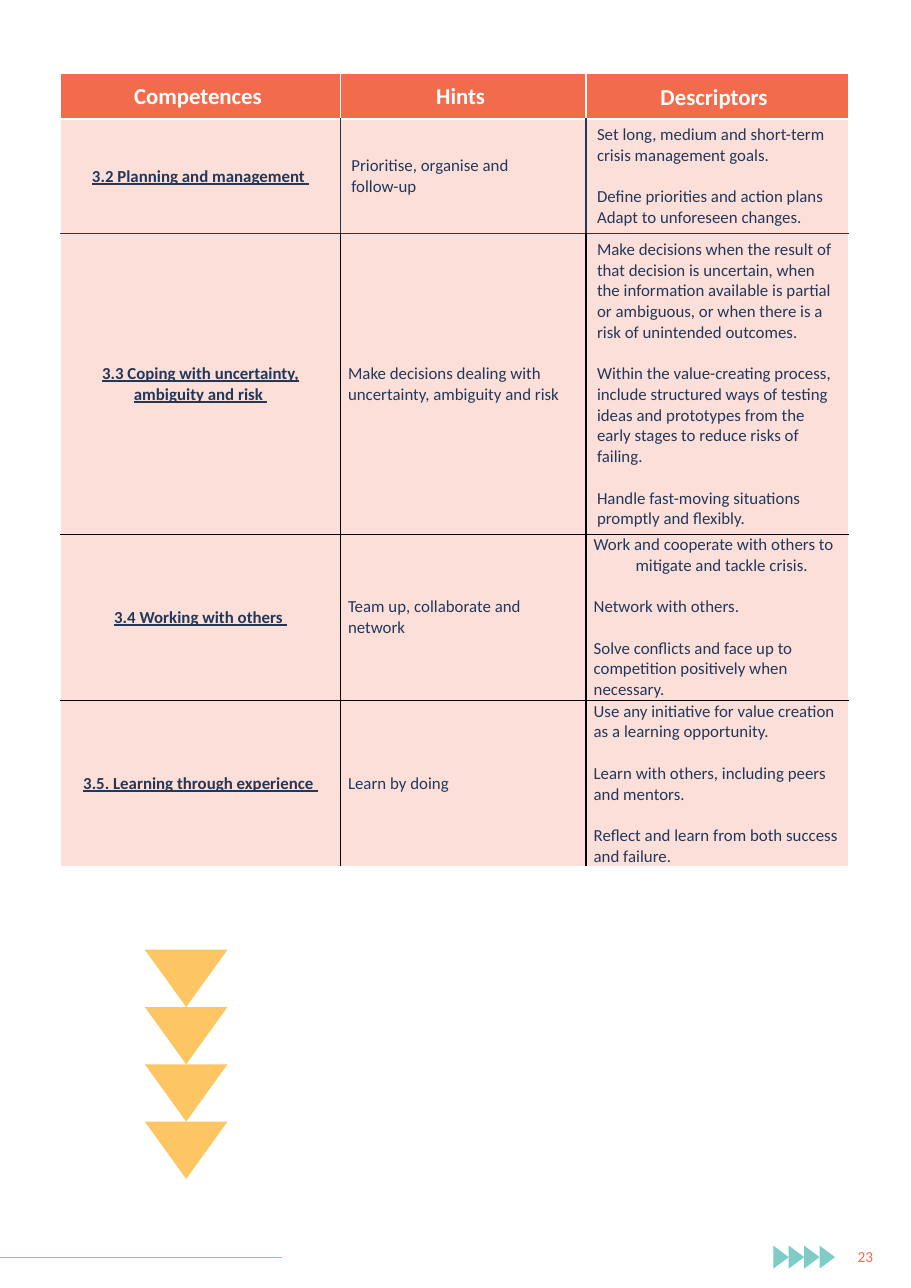
"""Build a page with a competence table, arrow triangles and a page footer."""
from lxml.etree import SubElement
from pptx import Presentation
from pptx.dml.color import RGBColor
from pptx.enum.shapes import MSO_CONNECTOR, MSO_SHAPE
from pptx.enum.text import MSO_ANCHOR, PP_ALIGN
from pptx.oxml.ns import qn
from pptx.util import Inches, Pt

CORAL = RGBColor(0xF2, 0x6B, 0x4D)
NAVY = RGBColor(0x22, 0x38, 0x5A)
TEAL = RGBColor(0x7F, 0xCC, 0xC7)
YELLOW = RGBColor(0xFD, 0xC6, 0x62)
WHITE = RGBColor(0xFF, 0xFF, 0xFF)
BLACK = RGBColor(0x00, 0x00, 0x00)

HEADERS = ["Competences ", "Hints ", "Descriptors"]
ROWS = [
    (["3.2 Planning and management "],
     ["Prioritise, organise and", "follow-up"],
     ["Set long, medium and short-term crisis management goals.",
      "Define priorities and action plans",
      "Adapt to unforeseen changes."]),
    (["3.3 Coping with uncertainty, ambiguity and risk "],
     ["Make decisions dealing with uncertainty, ambiguity and risk"],
     ["Make decisions when the result of that decision is uncertain, when "
      "the information available is partial or ambiguous, or when there is a "
      "risk of unintended outcomes.",
      "Within the value-creating process, include structured ways of testing "
      "ideas and prototypes from the early stages to reduce risks of failing.",
      "Handle fast-moving situations promptly and flexibly."]),
    (["3.4 Working with others "],
     ["Team up, collaborate and network"],
     ["Work and cooperate with others to mitigate and tackle crisis.",
      "Network with others.",
      "Solve conflicts and face up to competition positively when necessary."]),
    (["3.5. Learning through experience "],
     ["Learn by doing"],
     ["Use any initiative for value creation as a learning opportunity.",
      "Learn with others, including peers and mentors.",
      "Reflect and learn from both success and failure."]),
]
UNSPACED = {"follow-up", "Adapt to unforeseen changes."}
COLUMN_WIDTHS = [2.54, 2.23, 2.38]
ROW_HEIGHTS = [0.41, 1.04, 2.73, 1.51, 1.51]
INNER_VERTICALS = [WHITE, NAVY, BLACK, BLACK, BLACK]
HORIZONTALS = [WHITE, WHITE, NAVY, BLACK, BLACK, WHITE]


def add_border(cell, side, color):
    line = SubElement(cell._tc.get_or_add_tcPr(), qn(f"a:ln{side}"), w=str(Pt(1)))
    SubElement(SubElement(line, qn("a:solidFill")), qn("a:srgbClr"), val=str(color))


def add_triangle(page, center_x, center_y, base, height, rotation, color):
    triangle = page.shapes.add_shape(
        MSO_SHAPE.ISOSCELES_TRIANGLE, Inches(center_x - base / 2),
        Inches(center_y - height / 2), Inches(base), Inches(height))
    triangle.rotation = rotation
    triangle.shadow.inherit = False
    triangle.fill.solid()
    triangle.fill.fore_color.rgb = color
    triangle.line.fill.background()


deck = Presentation()
deck.slide_width, deck.slide_height = Inches(8.27), Inches(11.69)
page = deck.slides.add_slide(deck.slide_layouts[6])

rule = page.shapes.add_connector(
    MSO_CONNECTOR.STRAIGHT, 0, Inches(11.41), Inches(2.56), Inches(11.41))
rule.line.color.rgb = TEAL
rule.line.width = Pt(0.75)
SubElement(rule._element.spPr, qn("a:effectLst"))

number_box = page.shapes.add_textbox(
    Inches(7.66), Inches(11.26), Inches(0.39), Inches(0.29))
number_box.text_frame.word_wrap = True
number_box.text_frame.vertical_anchor = MSO_ANCHOR.MIDDLE
para = number_box.text_frame.paragraphs[0]
para.text = "23"
para.alignment = PP_ALIGN.CENTER
para.font.name, para.font.size = "Calibri", Pt(10)
para.font.color.rgb = CORAL

for index in range(4):
    add_triangle(page, 7.09 + 0.14 * index, 11.41, 0.21, 0.14, 90, TEAL)
    add_triangle(page, 1.69, 8.88 + 0.52 * index, 0.75, 0.52, 180, YELLOW)

table = page.shapes.add_table(
    5, 3, Inches(0.55), Inches(0.67), Inches(sum(COLUMN_WIDTHS)),
    Inches(sum(ROW_HEIGHTS))).table
for column, width in zip(table.columns, COLUMN_WIDTHS):
    column.width = Inches(width)
for row, height in zip(table.rows, ROW_HEIGHTS):
    row.height = Inches(height)

contents = [[[header] for header in HEADERS], *ROWS]
for row_index, row_texts in enumerate(contents):
    is_header = row_index == 0
    inner = INNER_VERTICALS[row_index]
    for column_index, lines in enumerate(row_texts):
        cell = table.cell(row_index, column_index)
        cell.vertical_anchor = MSO_ANCHOR.MIDDLE
        add_border(cell, "L", WHITE if column_index == 0 else inner)
        add_border(cell, "R", WHITE if column_index == 2 else inner)
        add_border(cell, "T", HORIZONTALS[row_index])
        add_border(cell, "B", HORIZONTALS[row_index + 1])
        cell.fill.solid()
        cell.fill.fore_color.rgb = CORAL
        if not is_header:
            tint = cell._tc.tcPr.find(qn("a:solidFill")).find(qn("a:srgbClr"))
            SubElement(tint, qn("a:alpha"), val="21000")
        if (row_index, column_index) in {(2, 1), (3, 1), (3, 2), (4, 1), (4, 2)}:
            cell.margin_left = cell.margin_right = Inches(0.07)
            cell.margin_top = cell.margin_bottom = 0

        for line_index, text in enumerate(lines):
            frame = cell.text_frame
            para = frame.add_paragraph() if line_index else frame.paragraphs[0]
            span = para.add_run()
            span.text = text
            centred = is_header or column_index == 0
            para.alignment = PP_ALIGN.CENTER if centred else PP_ALIGN.LEFT
            if line_index and text not in UNSPACED:
                para.space_before = Pt(13.4)
            para.font.name = "Calibri"
            para.font.size = Pt(14.9 if is_header else 11)
            para.font.bold = centred
            para.font.underline = centred and not is_header
            para.font.color.rgb = WHITE if is_header else NAVY

hanging = table.cell(3, 2).text_frame.paragraphs[0]._p.get_or_add_pPr()
hanging.set("marL", str(Inches(0.38)))
hanging.set("indent", str(-Inches(0.38)))
spacer = table.cell(0, 2).text_frame.paragraphs[0].add_run()
spacer.text = " "
spacer.font.size = Pt(18)

deck.save("out.pptx")
